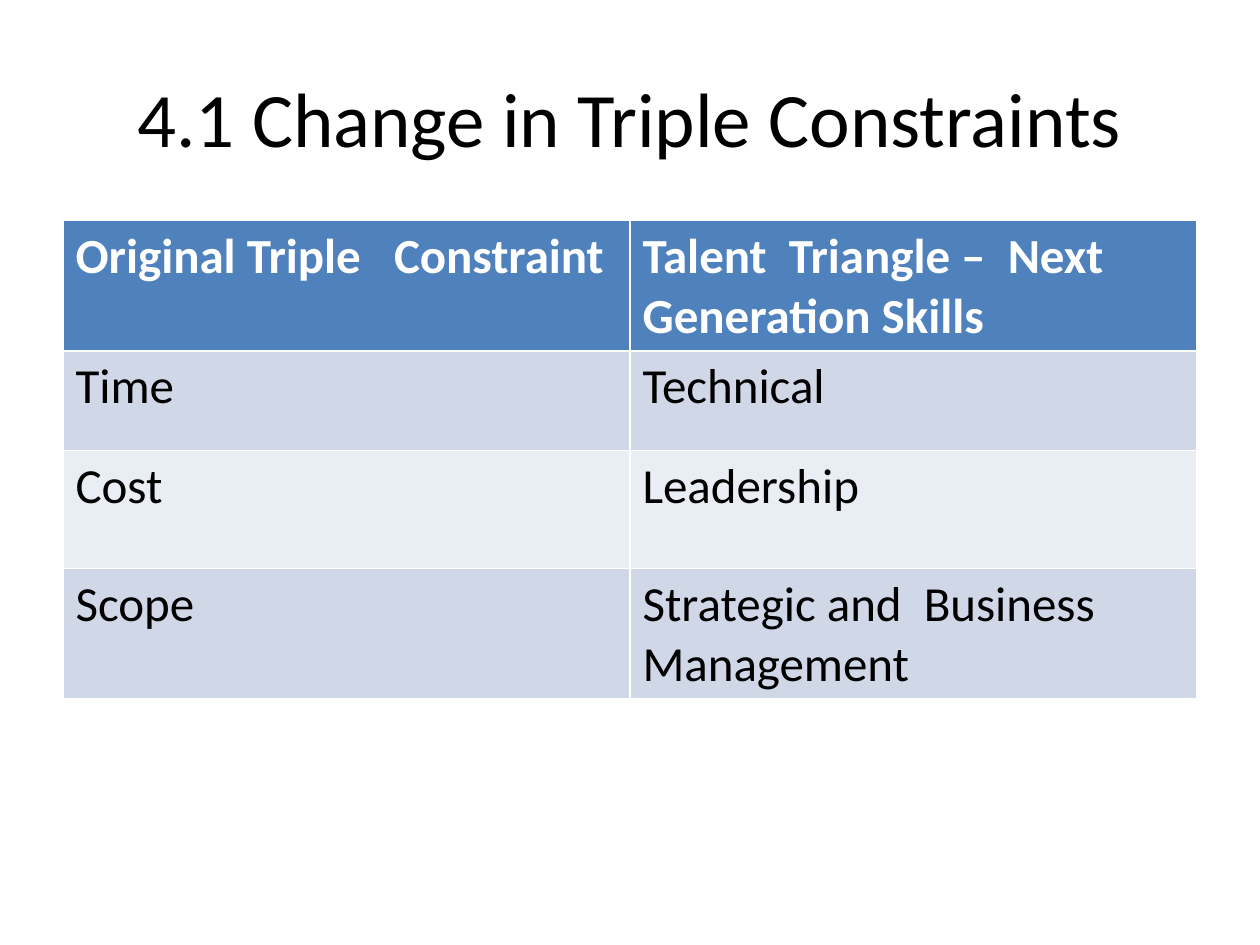
from pptx import Presentation
from pptx.dml.color import RGBColor
from pptx.enum.text import MSO_ANCHOR, PP_ALIGN
from pptx.util import Inches, Pt

COLORS = {
    "text": "000000",
    "header_text": "FFFFFF",
    "header": "4F81BD",
    "odd_row": "D0D8E8",
    "even_row": "E9EDF4",
}
FONT = "Calibri"
CONSTRAINTS = [
    ("Original Triple   Constraint", "Talent  Triangle –  Next Generation Skills"),
    ("Time", "Technical"),
    ("Cost", "Leadership"),
    ("Scope", "Strategic and  Business Management"),
]
ROW_HEIGHTS = [0.9, 0.79, 0.94, 1.02]


def style_text(text_frame, size, color, bold=False):
    """Apply the slide font to every run of a text frame."""
    for paragraph in text_frame.paragraphs:
        for run in paragraph.runs:
            run.font.name = FONT
            run.font.size = Pt(size)
            run.font.bold = bold
            run.font.color.rgb = RGBColor.from_string(COLORS[color])


def add_title(slide, wording):
    """Add the centred slide title."""
    title = slide.shapes.add_textbox(Inches(0.5), Inches(0.3), Inches(9), Inches(1.25))
    frame = title.text_frame
    frame.word_wrap = True
    frame.vertical_anchor = MSO_ANCHOR.MIDDLE
    frame.text = wording
    frame.paragraphs[0].alignment = PP_ALIGN.CENTER
    style_text(frame, 44, "text")


def fill_cell(cell, wording, fill, color, bold):
    """Write one table cell and colour its background."""
    cell.text = wording
    cell.fill.solid()
    cell.fill.fore_color.rgb = RGBColor.from_string(COLORS[fill])
    style_text(cell.text_frame, 28, color, bold)


def add_constraint_table(slide):
    """Add the two-column comparison with a header and banded rows."""
    table = slide.shapes.add_table(
        len(CONSTRAINTS), 2, Inches(0.5), Inches(1.75), Inches(9), Inches(sum(ROW_HEIGHTS))
    ).table
    for index, (height, wordings) in enumerate(zip(ROW_HEIGHTS, CONSTRAINTS)):
        table.rows[index].height = Inches(height)
        is_header = index == 0
        band = "odd_row" if index % 2 else "even_row"
        fill, color = ("header", "header_text") if is_header else (band, "text")
        for column, wording in enumerate(wordings):
            fill_cell(table.cell(index, column), wording, fill, color, is_header)


def main():
    """Build and save the slide."""
    presentation = Presentation()
    presentation.slide_width = Inches(10)
    presentation.slide_height = Inches(7.5)
    slide = presentation.slides.add_slide(presentation.slide_layouts[6])
    add_title(slide, "4.1 Change in Triple Constraints")
    add_constraint_table(slide)
    presentation.save("out.pptx")


if __name__ == "__main__":
    main()
